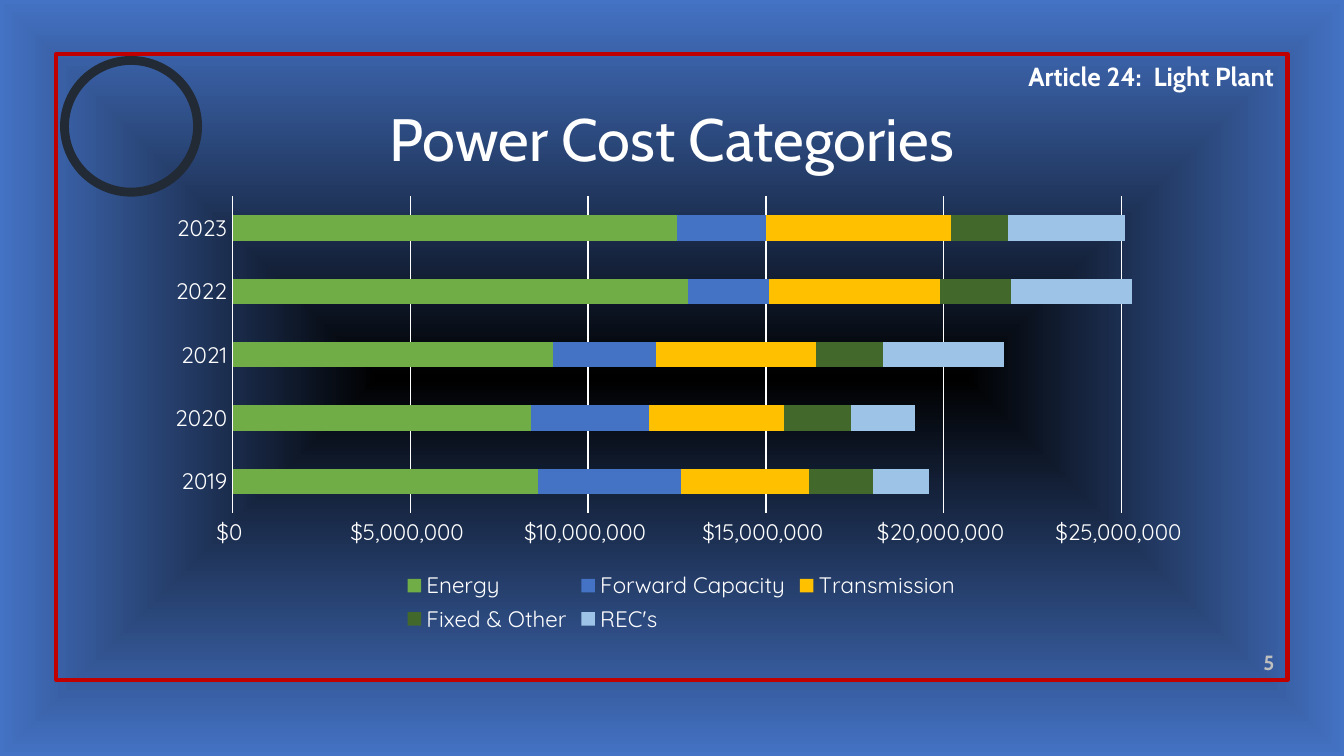
import pptx
import pptx.util
import pptx.oxml
import pptx.oxml.ns
import pptx.chart.data
import pptx.dml.color
import pptx.enum.chart
import pptx.enum.shapes
import pptx.enum.text

WIDE = 10
HIGH = WIDE * 9 / 16
WHITE = "FFFFFF"
YEARS = ["2019", "2020", "2021", "2022", "2023"]
COSTS = [
    ("Energy", "70AD47", [8.6, 8.4, 9.0, 12.8, 12.5]),
    ("Forward Capacity", "4472C4", [4.0, 3.3, 2.9, 2.3, 2.5]),
    ("Transmission", "FFC000", [3.6, 3.8, 4.5, 4.8, 5.2]),
    ("Fixed & Other", "43682B", [1.8, 1.9, 1.9, 2.0, 1.6]),
    ("REC's", "9DC3E6", [1.6, 1.8, 3.4, 3.4, 3.3]),
]
MILLION = 1000000
ALIGN = pptx.enum.text.PP_ALIGN
ANCHOR = pptx.enum.text.MSO_ANCHOR
TEXTS = [
    ("Article 24:  Light Plant", (6.91, 0.4, 2.67, 0.34), 14, WHITE, True, ALIGN.RIGHT, ANCHOR.TOP),
    ("Power Cost Categories", (0.5, 0.65, 9, 0.75), 32, WHITE, False, ALIGN.CENTER, ANCHOR.MIDDLE),
    ("5", (9, 4.83, 0.58, 0.24), 11, "BFBFBF", True, ALIGN.RIGHT, ANCHOR.BOTTOM),
]
SHAPE = pptx.enum.shapes.MSO_SHAPE
FRAMES = [
    (SHAPE.RECTANGLE, (0.42, 0.4, 9.16, 4.66), "C00000", 2.25),
    (SHAPE.OVAL, (0.48, 0.45, 0.99, 0.98), "222A35", 4.75),
]
CHART = (1.14, 1.4, 7.86, 3.35)
PLOT = (1.73, 1.46, 6.88, 2.36)


def color(code):
    return pptx.dml.color.RGBColor.from_string(code)


def place(box):
    return [pptx.util.Inches(n) for n in box]


def put(thing, values):
    for name, value in values.items():
        setattr(thing, name, value)


def style(font, face, size, code, bold=False):
    put(font, {"name": face, "size": pptx.util.Pt(size), "bold": bold})
    font.color.rgb = color(code)


def paint(slide):
    fill = slide.background.fill
    fill.gradient()
    for stop, code, spot in zip(fill.gradient_stops, ("000000", "4472C4"), (0, 1)):
        stop.color.rgb = color(code)
        stop.position = spot
    grad = slide.element.find(".//" + pptx.oxml.ns.qn("a:gradFill"))
    line = grad.find(pptx.oxml.ns.qn("a:lin"))
    grad.replace(line, pptx.oxml.parse_xml(
        f'<a:path {pptx.oxml.ns.nsdecls("a")} path="shape">'
        '<a:fillToRect l="50000" t="50000" r="50000" b="50000"/></a:path>'))


def frame(slide, kind, box, code, weight):
    shape = slide.shapes.add_shape(kind, *place(box))
    shape.shadow.inherit = False
    shape.fill.background()
    shape.line.color.rgb = color(code)
    shape.line.width = pptx.util.Pt(weight)


def write(slide, text, box, size, code, bold, align, anchor):
    body = slide.shapes.add_textbox(*place(box)).text_frame
    put(body, {"word_wrap": True, "vertical_anchor": anchor})
    para = body.paragraphs[0]
    put(para, {"text": text, "alignment": align})
    style(para.runs[0].font, "Cabin", size, code, bold)


def fit(chart):
    area = chart.element.find(".//" + pptx.oxml.ns.qn("c:plotArea"))
    for old in area.findall(pptx.oxml.ns.qn("c:layout")):
        area.remove(old)
    left, top, width, height = CHART
    x, y, w, h = PLOT
    shares = {"x": (x - left) / width, "y": (y - top) / height, "w": w / width, "h": h / height}
    modes = "".join(f'<c:{key}Mode val="edge"/>' for key in "xy")
    sides = "".join(f'<c:{key} val="{share}"/>' for key, share in shares.items())
    area.insert(0, pptx.oxml.parse_xml(
        f'<c:layout {pptx.oxml.ns.nsdecls("c")}><c:manualLayout>'
        f'<c:layoutTarget val="inner"/>{modes}{sides}</c:manualLayout></c:layout>'))


def graph(slide):
    kinds = pptx.enum.chart
    data = pptx.chart.data.CategoryChartData()
    data.categories = YEARS
    for name, code, costs in COSTS:
        data.add_series(name, [round(cost * MILLION) for cost in costs])
    chart = slide.shapes.add_chart(
        kinds.XL_CHART_TYPE.BAR_STACKED, *place(CHART), data).chart
    put(chart, {"has_title": False, "has_legend": True})
    style(chart.font, "Quicksand", 10, WHITE)
    put(chart.legend, {"position": kinds.XL_LEGEND_POSITION.BOTTOM, "include_in_layout": False})
    style(chart.legend.font, "Quicksand", 12, WHITE)
    bars = chart.plots[0]
    put(bars, {"gap_width": 150, "overlap": 100, "vary_by_categories": False})
    for series, (name, code, costs) in zip(bars.series, COSTS):
        series.format.fill.solid()
        series.format.fill.fore_color.rgb = color(code)
    none = kinds.XL_TICK_MARK.NONE
    for axis in (chart.category_axis, chart.value_axis):
        put(axis, {"major_tick_mark": none, "minor_tick_mark": none})
        axis.format.line.fill.background()
        style(axis.tick_labels.font, "Quicksand", 12, WHITE)
    scale = chart.value_axis
    put(scale, {"minimum_scale": 0, "maximum_scale": 26 * MILLION,
                "major_unit": 5 * MILLION, "has_major_gridlines": True})
    put(scale.tick_labels, {"number_format": r'"$"#,##0_);\("$"#,##0\)',
                            "number_format_is_linked": False})
    grid = scale.major_gridlines.format.line
    grid.color.rgb = color(WHITE)
    grid.width = pptx.util.Pt(0.75)
    fit(chart)


def main():
    deck = pptx.Presentation()
    put(deck, {"slide_width": pptx.util.Inches(WIDE), "slide_height": pptx.util.Inches(HIGH)})
    slide = deck.slides.add_slide(deck.slide_layouts[6])
    paint(slide)
    for item in FRAMES:
        frame(slide, *item)
    for item in TEXTS:
        write(slide, *item)
    graph(slide)
    deck.save("out.pptx")


if __name__ == "__main__":
    main()
